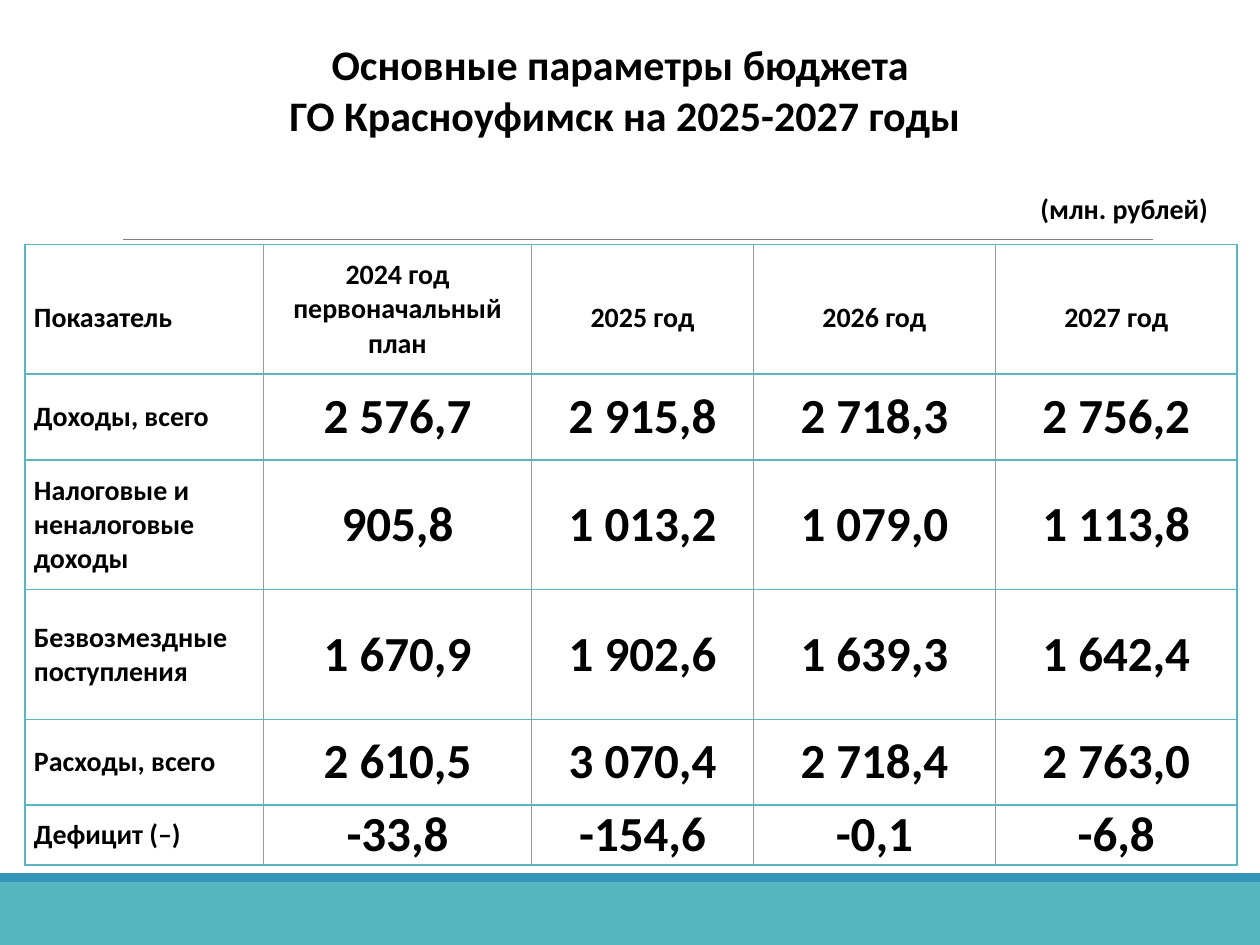
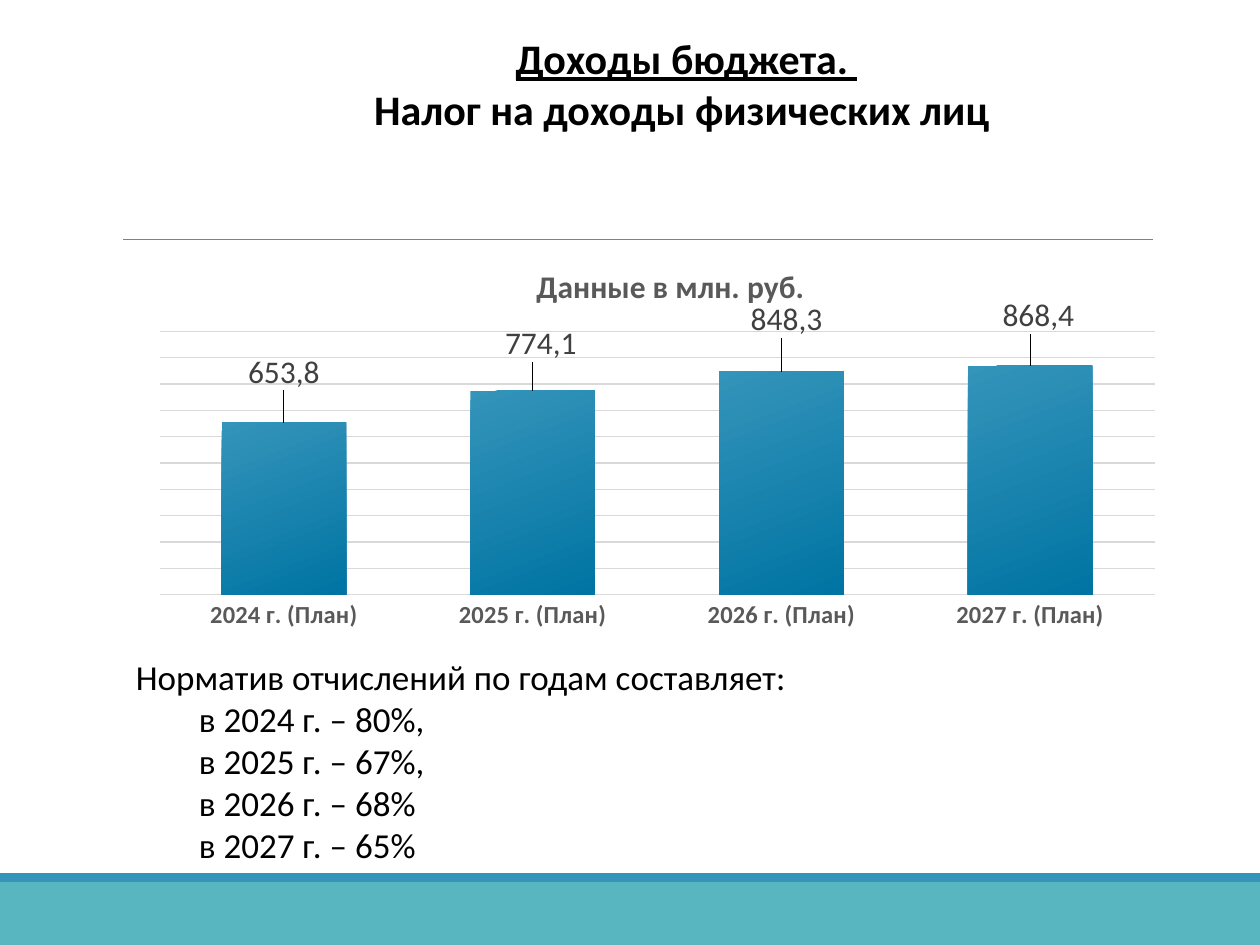
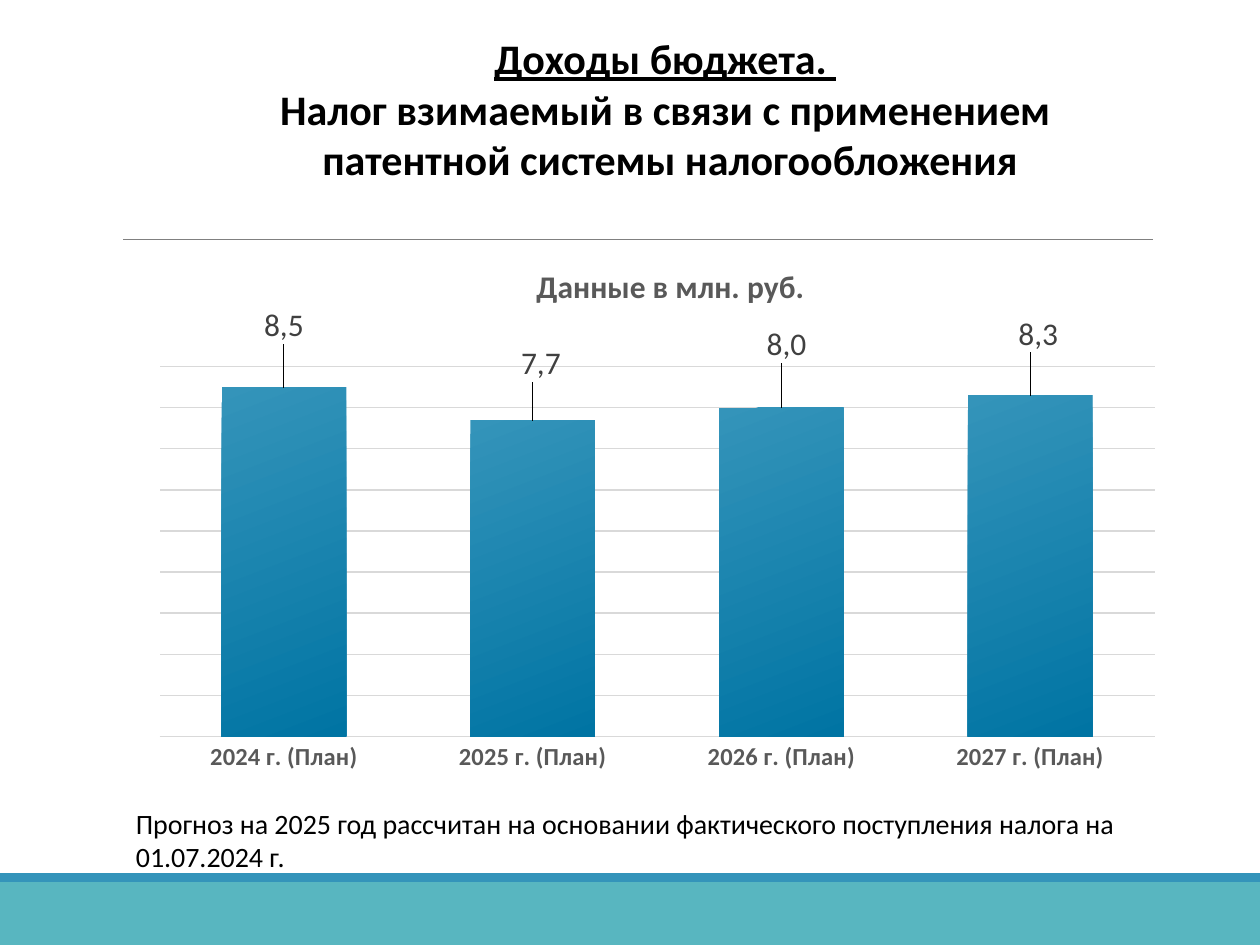
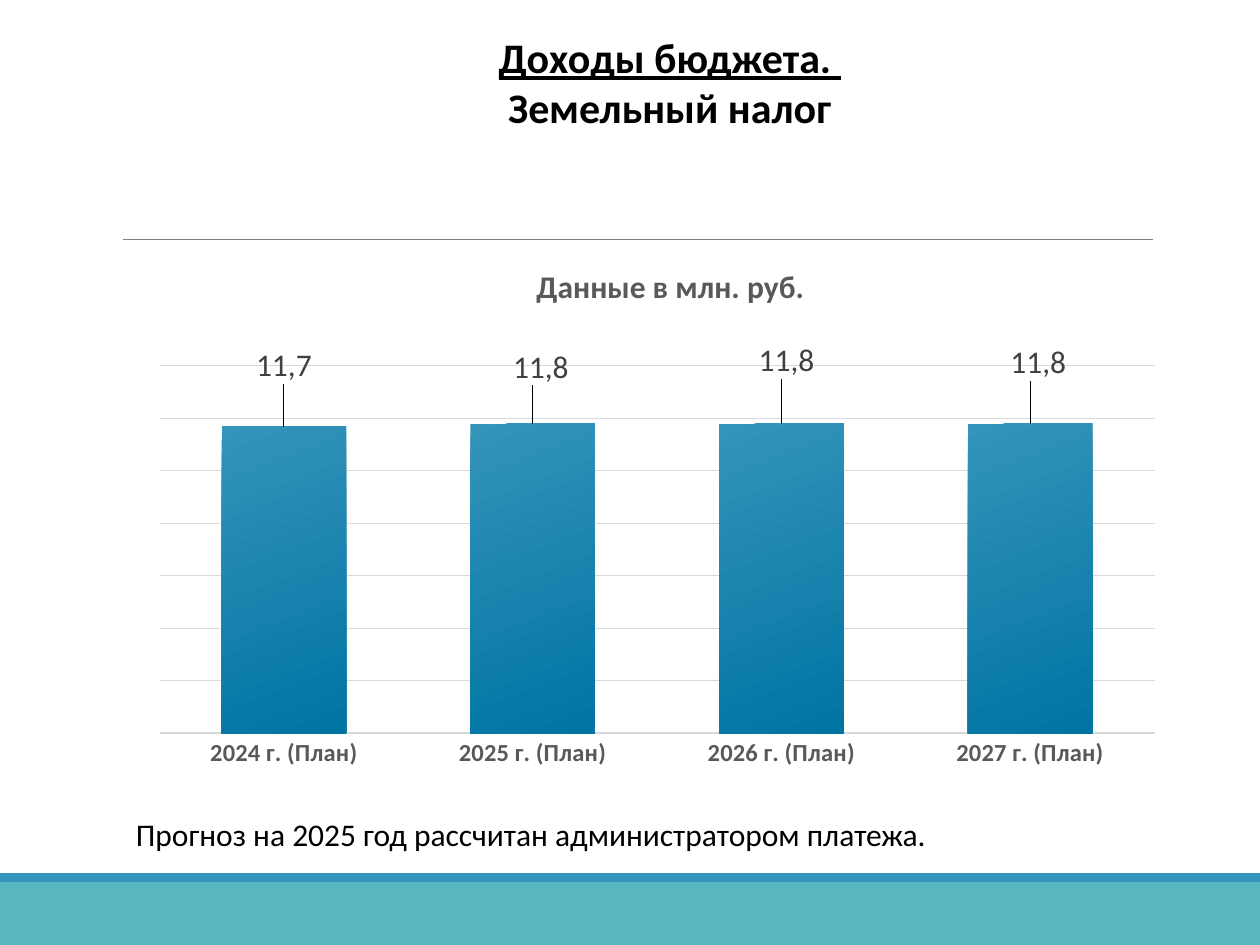
"""Build four slides on the town budget for 2025-2027."""
from dataclasses import dataclass

from lxml.etree import SubElement
from pptx import Presentation
from pptx.chart.chart import Chart
from pptx.chart.data import CategoryChartData
from pptx.dml.color import RGBColor
from pptx.enum.chart import XL_CHART_TYPE, XL_LABEL_POSITION, XL_TICK_MARK
from pptx.enum.shapes import MSO_CONNECTOR, MSO_SHAPE
from pptx.enum.text import MSO_ANCHOR, MSO_AUTO_SIZE, PP_ALIGN
from pptx.oxml.ns import qn
from pptx.slide import Slide
from pptx.util import Pt

COLORS = {
    "text": "000000",
    "teal": "58B6C0",
    "blue": "3494BA",
    "deep_blue": "0074A3",
    "rule": "808080",
    "grid": "D9D9D9",
    "axis_text": "595959",
    "label_text": "404040",
}
FONT = "Calibri"
CHART_FONT = "Cambria"
SLIDE_WIDTH, SLIDE_HEIGHT = 720, 540
CHART_LEFT, CHART_TOP, CHART_WIDTH = 70.56, 139.68, 589.68
YEARS = (2024, 2025, 2026, 2027)
LABEL_SHIFTS = ((0, -0.066), (0.008, -0.058), (0.005, -0.07), (0.008, -0.066))
COLUMN_WIDTHS = (136.08, 153.36, 126.72, 138.24, 138.24)
ROW_HEIGHTS = (74.16, 48.96, 74.16, 74.16, 48.96, 31.68)
BUDGET_ROWS = (
    ("Показатель", "2024 год\nпервоначальный план", "2025 год", "2026 год", "2027 год"),
    ("Доходы, всего", "2 576,7", "2 915,8", "2 718,3", "2 756,2"),
    ("Налоговые и неналоговые доходы", "905,8", "1 013,2", "1 079,0", "1 113,8"),
    ("Безвозмездные поступления", "1 670,9", "1 902,6", "1 639,3", "1 642,4"),
    ("Расходы, всего", "2 610,5", "3 070,4", "2 718,4", "2 763,0"),
    ("Дефицит (–)", "-33,8", "-154,6", "-0,1", "-6,8"),
)


@dataclass(frozen=True)
class Box:
    left: float
    top: float
    width: float
    height: float

    def lengths(self) -> tuple:
        return Pt(self.left), Pt(self.top), Pt(self.width), Pt(self.height)


@dataclass(frozen=True)
class Line:
    text: str
    size: float
    bold: bool = False
    underline: bool = False
    align: PP_ALIGN = PP_ALIGN.LEFT
    indent: float = 0


@dataclass(frozen=True)
class TaxSlide:
    title_box: Box
    title_lines: tuple[str, ...]
    note_box: Box
    note: tuple[Line, ...]
    chart_height: float
    thousands: tuple[int, ...]
    axis_maximum: int
    axis_step: int
    number_format: str = "#,##0.0"


BANDS = (
    (Box(0, 504, SLIDE_WIDTH, 36), "teal"),
    (Box(0, 499, SLIDE_WIDTH, 5), "blue"),
)

TAX_SLIDES = (
    TaxSlide(
        Box(77, 15.1, 630.7, 65.5),
        ("Налог на доходы физических лиц ",),
        Box(70.56, 370.8, 589.68, 128.2),
        (Line("Норматив отчислений по годам составляет:", 20),)
        + tuple(
            Line(text, 20, indent=36)
            for text in ("в 2024 г. – 80%,", "в 2025 г. – 67%,", "в 2026 г. – 68%", "в 2027 г. – 65%")
        ),
        231.1, (653800, 774100, 848300, 868400), 1000000, 100000, "#,##0.00",
    ),
    TaxSlide(
        Box(99.4, 15.1, 561.6, 94.3),
        ("Налог взимаемый в связи с применением", " патентной системы налогообложения"),
        Box(70.56, 457.2, 589.68, 46.1),
        (Line("Прогноз на 2025 год рассчитан на основании фактического поступления налога на 01.07.2024 г.", 16),),
        324.7, (8500, 7700, 8000, 8300), 9000, 1000,
    ),
    TaxSlide(
        Box(99.4, 14.4, 566.6, 65.5),
        ("Земельный налог",),
        Box(70.56, 462.2, 589.68, 28.8),
        (Line("Прогноз на 2025 год рассчитан администратором платежа.", 18, align=PP_ALIGN.JUSTIFY),),
        322.6, (11700, 11800, 11800, 11800), 14000, 2000,
    ),
)


def color(name: str) -> RGBColor:
    return RGBColor.from_string(COLORS[name])


def style_font(font, size: float, color_name: str = "text", bold: bool = False, underline: bool = False) -> None:
    font.name = FONT
    font.size = Pt(size)
    font.bold = bold
    font.underline = underline
    font.color.rgb = color(color_name)


def write_line(paragraph, line: Line) -> None:
    paragraph.alignment = line.align
    if line.indent:
        paragraph._p.get_or_add_pPr().set("marL", str(Pt(line.indent)))
    for index, part in enumerate(line.text.split("\n")):
        if index:
            paragraph.add_line_break()
        run = paragraph.add_run()
        run.text = part
        style_font(run.font, line.size, bold=line.bold, underline=line.underline)


def add_text(slide: Slide, box: Box, lines: tuple[Line, ...]) -> None:
    frame = slide.shapes.add_textbox(*box.lengths()).text_frame
    frame.word_wrap = True
    frame.auto_size = MSO_AUTO_SIZE.SHAPE_TO_FIT_TEXT
    for index, line in enumerate(lines):
        write_line(frame.add_paragraph() if index else frame.paragraphs[0], line)


def title_line(text: str, underline: bool = False) -> Line:
    return Line(text, 24, True, underline, PP_ALIGN.CENTER)


def add_base_slide(presentation) -> Slide:
    slide = presentation.slides.add_slide(presentation.slide_layouts[6])
    rule = slide.shapes.add_connector(MSO_CONNECTOR.STRAIGHT, Pt(70.56), Pt(136.8), Pt(658.8), Pt(136.8))
    rule.line.color.rgb = color("rule")
    rule.line.width = Pt(0.5)
    SubElement(rule._element.spPr, qn("a:effectLst"))
    for box, fill in BANDS:
        band = slide.shapes.add_shape(MSO_SHAPE.RECTANGLE, *box.lengths())
        band.shadow.inherit = False
        band.fill.solid()
        band.fill.fore_color.rgb = color(fill)
        band.line.fill.background()
    return slide


def outline_cell(cell) -> None:
    properties = cell._tc.get_or_add_tcPr()
    for index, side in enumerate(("a:lnL", "a:lnR", "a:lnT", "a:lnB")):
        border = SubElement(properties, qn(side), w=str(Pt(1)))
        fill = SubElement(border, qn("a:solidFill"))
        SubElement(fill, qn("a:srgbClr"), val=COLORS["teal"])
        properties.insert(index, border)


def add_budget_table(slide: Slide) -> None:
    box = Box(14.4, 139.68, sum(COLUMN_WIDTHS), sum(ROW_HEIGHTS))
    table = slide.shapes.add_table(len(ROW_HEIGHTS), len(COLUMN_WIDTHS), *box.lengths()).table
    table.first_row = table.horz_banding = False
    for column, width in zip(table.columns, COLUMN_WIDTHS):
        column.width = Pt(width)
    for row_index, (row, height, texts) in enumerate(zip(table.rows, ROW_HEIGHTS, BUDGET_ROWS)):
        row.height = Pt(height)
        for column_index, (cell, text) in enumerate(zip(row.cells, texts)):
            cell.vertical_anchor = MSO_ANCHOR.MIDDLE
            cell.margin_left = cell.margin_right = Pt(5.04)
            cell.margin_top = cell.margin_bottom = Pt(0)
            cell.fill.background()
            outline_cell(cell)
            size = 28 if row_index and column_index else 16
            align = PP_ALIGN.CENTER if column_index else PP_ALIGN.LEFT
            paragraph = cell.text_frame.paragraphs[0]
            write_line(paragraph, Line(text, size, True, align=align))
            if row_index == 0 and column_index != 1:
                paragraph.line_spacing = 1.5


def set_layout(parent, index: int, modes: dict[str, str], **values: float) -> None:
    previous = parent.find(qn("c:layout"))
    if previous is not None:
        parent.remove(previous)
    layout = SubElement(parent, qn("c:layout"))
    manual = SubElement(layout, qn("c:manualLayout"))
    for name, value in (modes | values).items():
        SubElement(manual, qn(f"c:{name}"), val=str(value))
    parent.insert(index, layout)


def style_axes(chart: Chart, tax: TaxSlide) -> None:
    categories = chart.category_axis
    categories.major_tick_mark = categories.minor_tick_mark = XL_TICK_MARK.NONE
    style_font(categories.tick_labels.font, 14, "axis_text", True)
    categories.format.line.color.rgb = color("grid")
    categories.format.line.width = Pt(1)
    values = chart.value_axis
    values.visible = False
    values.minimum_scale = 0
    values.maximum_scale = tax.axis_maximum
    values.major_unit = tax.axis_step
    values.tick_labels.number_format = "#,##0.00"
    values.tick_labels.number_format_is_linked = False
    values.major_gridlines.format.line.color.rgb = color("grid")
    values.major_gridlines.format.line.width = Pt(0.75)


def style_columns(chart: Chart, tax: TaxSlide) -> None:
    plot = chart.plots[0]
    plot.gap_width = 100
    plot.overlap = -24
    plot.vary_by_categories = False
    series = plot.series[0]
    fill = series.format.fill
    fill.gradient()
    fill.gradient_angle = 291
    for stop, name in zip(fill.gradient_stops, ("blue", "deep_blue")):
        stop.color.rgb = color(name)
    labels = series.data_labels
    labels.show_value = True
    labels.number_format = tax.number_format
    labels.number_format_is_linked = False
    style_font(labels.font, 18, "label_text", True)
    for index, value in enumerate(tax.thousands):
        label = series.points[index].data_label
        run = label.text_frame.paragraphs[0].add_run()
        run.text = f"{value / 1000:.1f}".replace(".", ",")
        style_font(run.font, 18, "label_text")
        label.position = XL_LABEL_POSITION.OUTSIDE_END
    for element, (x, y) in zip(series._element.iter(qn("c:dLbl")), LABEL_SHIFTS):
        set_layout(element, 1, {}, x=x, y=y)


def add_tax_chart(slide: Slide, tax: TaxSlide) -> None:
    data = CategoryChartData()
    data.categories = [f"{year} г. (План)" for year in YEARS]
    data.add_series("Series 1", tax.thousands)
    box = Box(CHART_LEFT, CHART_TOP, CHART_WIDTH, tax.chart_height)
    chart = slide.shapes.add_chart(XL_CHART_TYPE.COLUMN_CLUSTERED, *box.lengths(), data).chart
    chart.font.name = CHART_FONT
    chart.font.size = Pt(10)
    chart.font.color.rgb = color("text")
    chart.has_legend = False
    chart.has_title = True
    run = chart.chart_title.text_frame.paragraphs[0].add_run()
    run.text = "Данные в млн. руб."
    style_font(run.font, 18, "axis_text", True)
    style_axes(chart, tax)
    style_columns(chart, tax)
    edges = {"xMode": "edge", "yMode": "edge"}
    set_layout(chart.chart_title._element, 1, edges, x=0.395, y=round(8 / tax.chart_height, 3))
    plot_area = chart._chartSpace.find(f".//{qn('c:plotArea')}")
    set_layout(plot_area, 0, {"layoutTarget": "inner"} | edges, x=0.035, y=0.215, w=0.965, h=0.651)


def add_budget_slide(presentation) -> None:
    slide = add_base_slide(presentation)
    add_budget_table(slide)
    title = ("Основные параметры бюджета ", "ГО Красноуфимск на 2025-2027 годы")
    add_text(slide, Box(42.5, 18.7, 629.3, 65.5), tuple(title_line(text) for text in title))
    add_text(slide, Box(587.5, 105.8, 132.5, 26.6), (Line("(млн. рублей)", 16, True),))


def add_tax_slide(presentation, tax: TaxSlide) -> None:
    slide = add_base_slide(presentation)
    heading = title_line("Доходы бюджета. ", underline=True)
    add_text(slide, tax.title_box, (heading, *(title_line(text) for text in tax.title_lines)))
    add_text(slide, tax.note_box, tax.note)
    add_tax_chart(slide, tax)


def main() -> None:
    presentation = Presentation()
    presentation.slide_width = Pt(SLIDE_WIDTH)
    presentation.slide_height = Pt(SLIDE_HEIGHT)
    add_budget_slide(presentation)
    for tax in TAX_SLIDES:
        add_tax_slide(presentation, tax)
    presentation.save("out.pptx")


if __name__ == "__main__":
    main()
